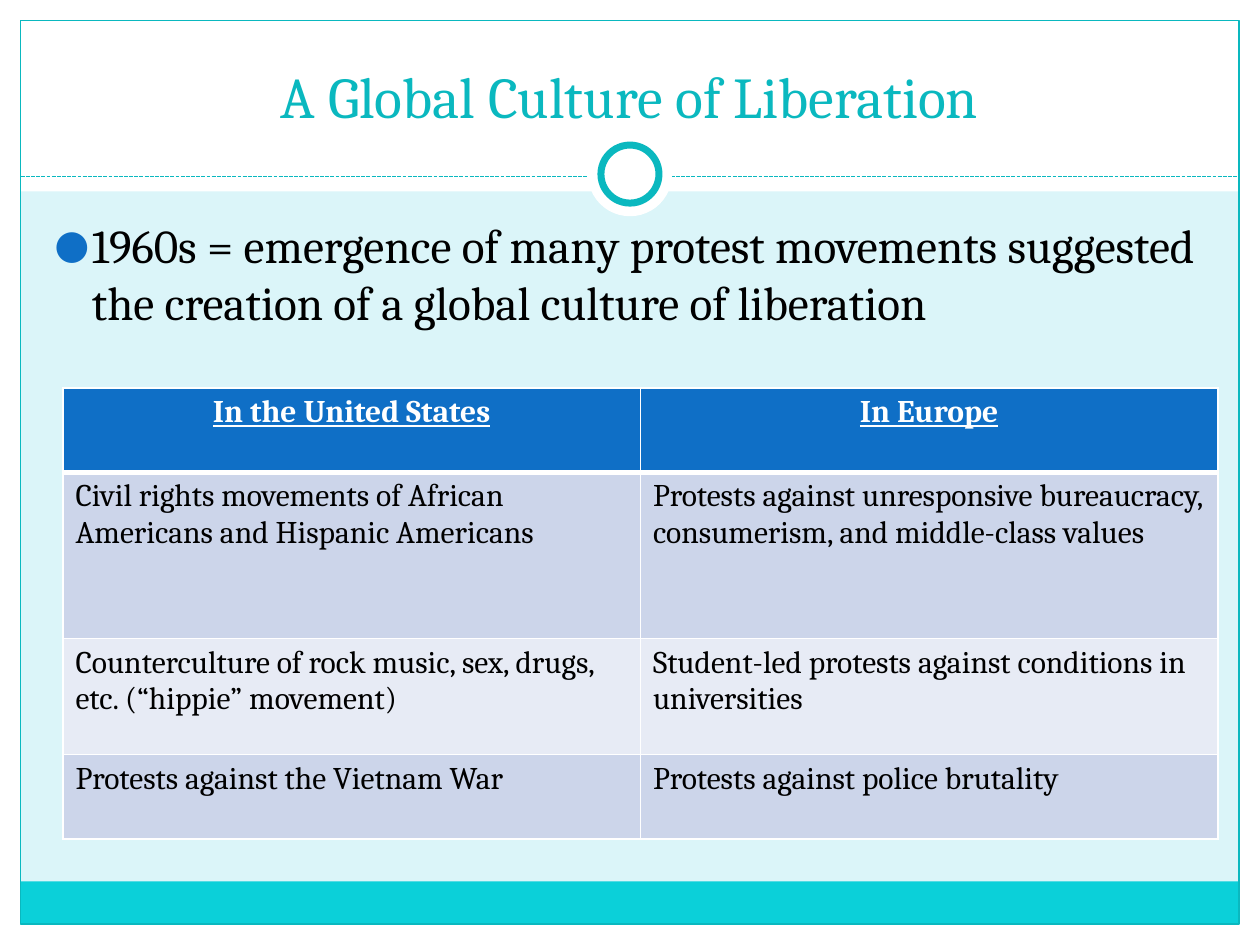
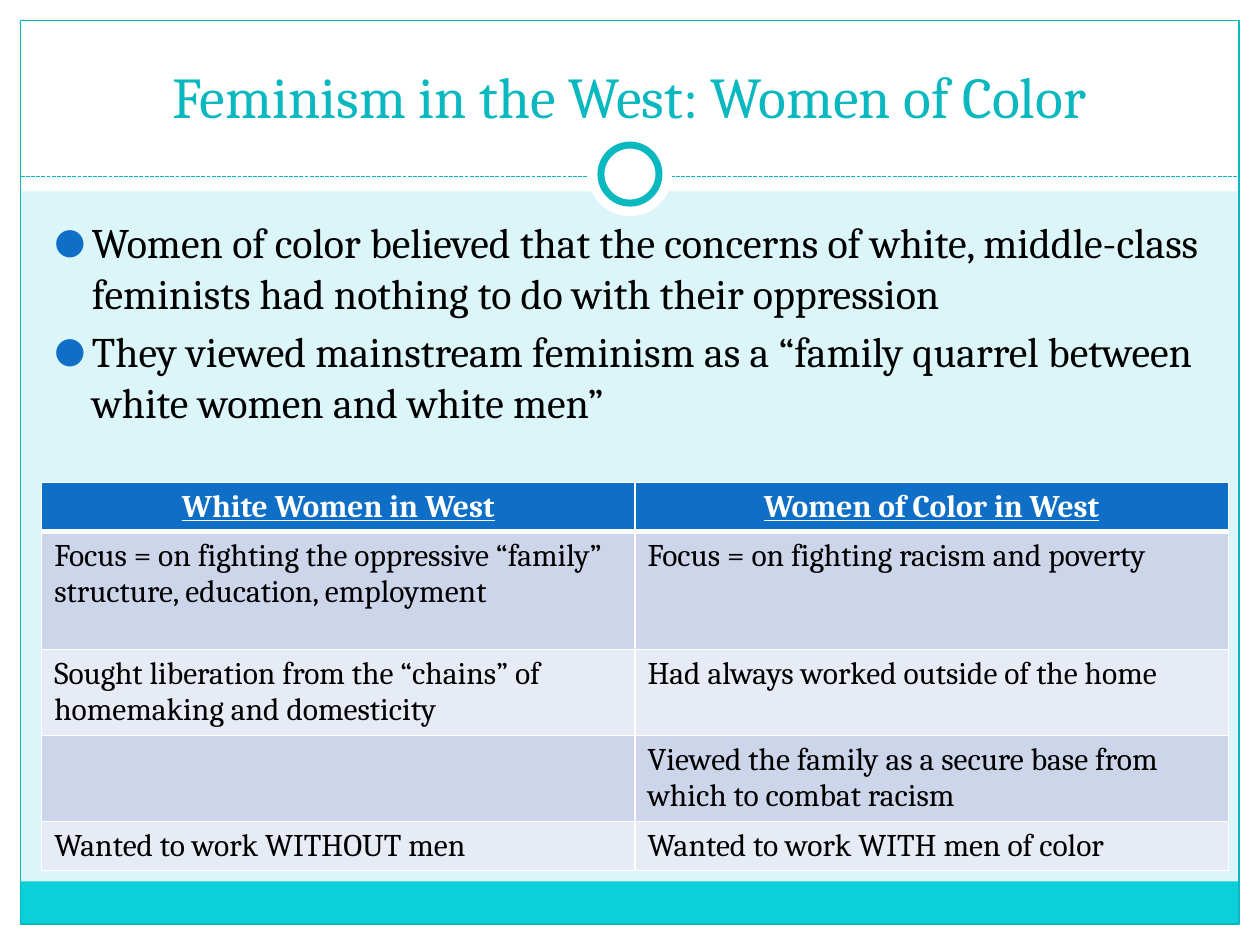
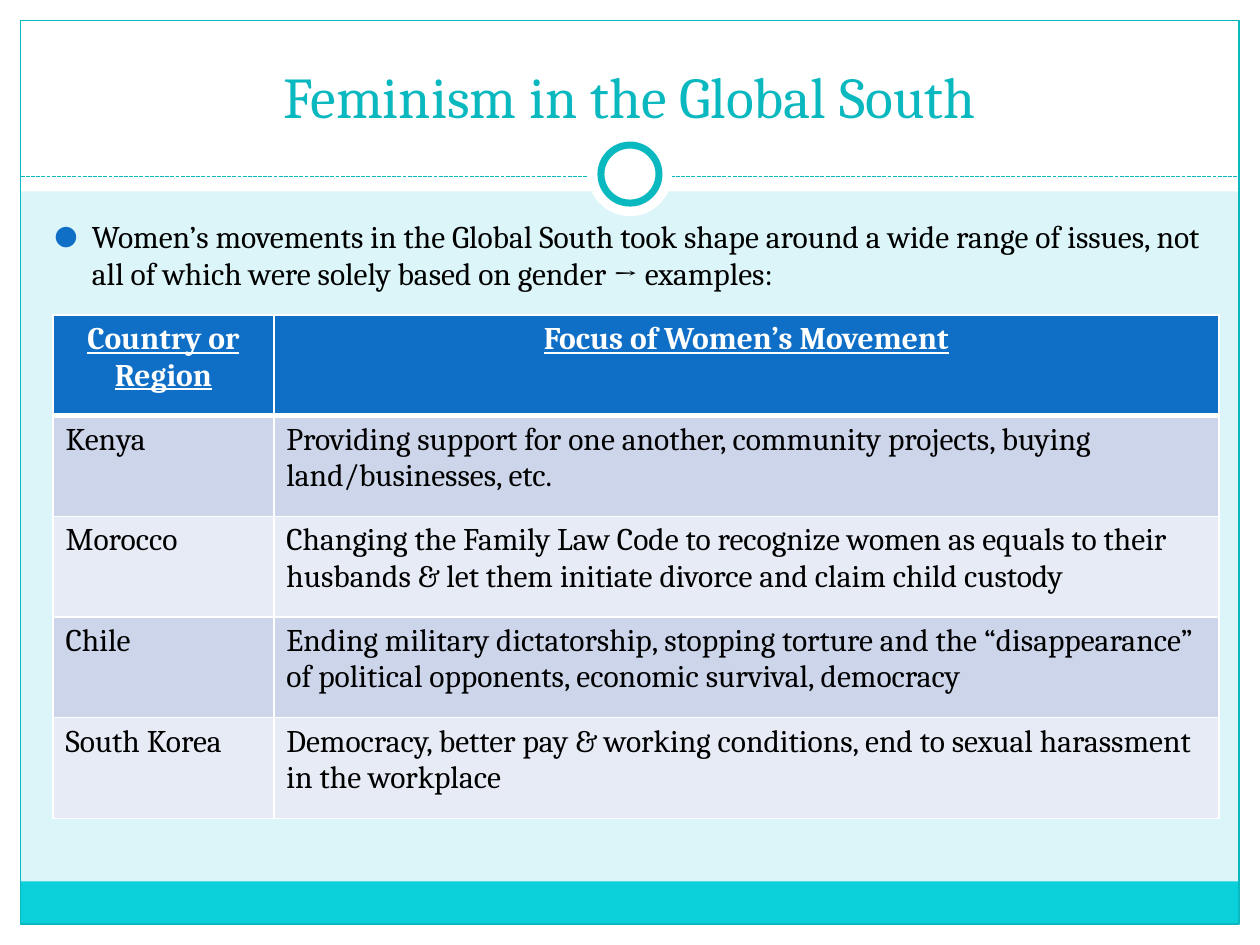
"""Build three slides on liberation movements, each with a list and a table."""
from dataclasses import dataclass

from lxml import etree
from pptx import Presentation
from pptx.dml.color import RGBColor
from pptx.enum.dml import MSO_LINE
from pptx.enum.shapes import MSO_CONNECTOR, MSO_SHAPE
from pptx.enum.text import MSO_ANCHOR, MSO_AUTO_SIZE, PP_ALIGN
from pptx.oxml.ns import qn
from pptx.util import Cm, Pt

RECTANGLE, OVAL = MSO_SHAPE.RECTANGLE, MSO_SHAPE.OVAL
STRAIGHT, DASH = MSO_CONNECTOR.STRAIGHT, MSO_LINE.SQUARE_DOT
CENTER, LEFT = PP_ALIGN.CENTER, PP_ALIGN.LEFT
BOTTOM, TOP = MSO_ANCHOR.BOTTOM, MSO_ANCHOR.TOP
NO_AUTOFIT = MSO_AUTO_SIZE.NONE


@dataclass(frozen=True)
class Theme:
    """Colours, font and type sizes of the deck."""
    font: str = "Cambria"
    backdrop: str = "DBF5F9"
    paper: str = "FFFFFF"
    ink: str = "000000"
    accent: str = "0AB8BF"
    footer: str = "0BD0D9"
    header: str = "0F6FC6"
    stripes: tuple = ("CCD5EA", "E7EBF5")
    title_size: float = 33
    table_size: float = 18
    hairline: float = 0.75
    ring: float = 4
    grid: float = 1
    header_rule: float = 3


@dataclass(frozen=True)
class Box:
    """A region in centimetres."""
    left: float
    top: float
    width: float
    height: float

    @property
    def right(self):
        """Return the right edge."""
        return self.left + self.width

    @property
    def bottom(self):
        """Return the bottom edge."""
        return self.top + self.height

    def lengths(self):
        """Return left, top, width and height as lengths."""
        return Cm(self.left), Cm(self.top), Cm(self.width), Cm(self.height)


THEME = Theme()
PAGE = Box(0, 0, 25.4, 19.05)
MARGIN = 0.42
FRAME = Box(MARGIN, MARGIN, PAGE.width - 2 * MARGIN, PAGE.height - 2 * MARGIN)
TITLE_BOX = Box(0.84, 0.64, 23.7, 2.11)
LIST_LEFT, LIST_TOP, LIST_WIDTH = 0.84, 4.24, 23.62

SLIDES = [
    {
        "title": "A Global Culture of Liberation",
        "points": ["1960s = emergence of many protest movements suggested the creation "
                   "of a global culture of liberation"],
        "point_size": 27,
        "list_height": 3.58,
        "table_corner": (1.27, 7.82),
        "columns": [11.64, 11.64],
        "row_heights": [1.7, 3.35, 2.34, 1.7],
        "rows": [
            ("In the United States", "In Europe"),
            ("Civil rights movements of African Americans and Hispanic Americans",
             "Protests against unresponsive bureaucracy, consumerism, and middle-class values"),
            ("Counterculture of rock music, sex, drugs, etc. (“hippie” movement)",
             "Student-led protests against conditions in universities"),
            ("Protests against the Vietnam War", "Protests against police brutality"),
        ],
    },
    {
        "title": "Feminism in the West: Women of Color",
        "points": ["Women of color believed that the concerns of white, middle-class "
                   "feminists had nothing to do with their oppression",
                   "They viewed mainstream feminism as a “family quarrel between "
                   "white women and white men”"],
        "point_size": 24,
        "list_height": 5.92,
        "table_corner": (0.84, 9.73),
        "columns": [11.96, 11.96],
        "row_heights": [0.98, 2.38, 1.73, 1.73, 0.98],
        "rows": [
            ("White Women in West", "Women of Color in West"),
            ("Focus = on fighting the oppressive “family” structure, education, employment",
             "Focus = on fighting racism and poverty"),
            ("Sought liberation from the “chains” of homemaking and domesticity",
             "Had always worked outside of the home"),
            ("", "Viewed the family as a secure base from which to combat racism"),
            ("Wanted to work WITHOUT men", "Wanted to work WITH men of color"),
        ],
    },
    {
        "title": "Feminism in the Global South",
        "points": ["Women’s movements in the Global South took shape around a wide range "
                   "of issues, not all of which were solely based on gender → examples:"],
        "point_size": 18,
        "list_height": 1.9,
        "table_corner": (1.07, 6.35),
        "columns": [4.45, 19.05],
        "row_heights": [2.03] * 5,
        "rows": [
            ("Country or Region", "Focus of Women’s Movement"),
            ("Kenya", "Providing support for one another, community projects, buying "
                      "land/businesses, etc."),
            ("Morocco", "Changing the Family Law Code to recognize women as equals to their "
                        "husbands & let them initiate divorce and claim child custody"),
            ("Chile", "Ending military dictatorship, stopping torture and the “disappearance” "
                      "of political opponents, economic survival, democracy"),
            ("South Korea", "Democracy, better pay & working conditions, end to sexual "
                            "harassment in the workplace"),
        ],
    },
]


def rgb(color):
    """Return a colour from its hex digits."""
    return RGBColor.from_string(color)


def format_runs(paragraph, size, color, bold=False, underline=False):
    """Format every run of a paragraph."""
    for run in paragraph.runs:
        run.font.name = THEME.font
        run.font.size = Pt(size)
        run.font.color.rgb = rgb(color)
        run.font.bold = bold
        run.font.underline = underline


def add_figure(shapes, preset, box, fill=None, line=None, weight=THEME.hairline):
    """Add a preset shape with an optional fill and outline."""
    figure = shapes.add_shape(preset, *box.lengths())
    figure.shadow.inherit = False
    if fill:
        figure.fill.solid()
        figure.fill.fore_color.rgb = rgb(fill)
    else:
        figure.fill.background()
    if line:
        figure.line.color.rgb = rgb(line)
        figure.line.width = Pt(weight)
    else:
        figure.line.fill.background()
    return figure


def add_divider(shapes, frame, y):
    """Add the dashed line across the frame."""
    divider = shapes.add_connector(STRAIGHT, Cm(frame.left), Cm(y), Cm(frame.right), Cm(y))
    divider.line.color.rgb = rgb(THEME.accent)
    divider.line.width = Pt(THEME.hairline)
    divider.line.dash_style = DASH
    etree.SubElement(divider.element.spPr, qn("a:effectLst"))
    return divider


def circle_box(center_x, center_y, diameter):
    """Return the box of a circle around a center."""
    return Box(center_x - diameter / 2, center_y - diameter / 2, diameter, diameter)


def draw_backdrop(shapes, page, frame):
    """Draw the bands, frame, divider and ring, from back to front."""
    bands = [
        Box(page.left, frame.bottom, page.width, MARGIN),
        Box(page.left, page.top, page.width, 3.86),
        Box(page.left, page.top, MARGIN, page.height),
        Box(frame.right, page.top, MARGIN, page.height),
    ]
    parts = [add_figure(shapes, RECTANGLE, band, THEME.paper) for band in bands]
    footer = Box(frame.left, frame.bottom - 0.86, frame.width, 0.86)
    parts.append(add_figure(shapes, RECTANGLE, footer, THEME.footer))
    parts.append(add_figure(shapes, RECTANGLE, frame, line=THEME.accent))
    parts.append(add_divider(shapes, frame, frame.top + 3.14))
    center = page.width / 2, frame.top + 3.09
    parts.append(add_figure(shapes, OVAL, circle_box(*center, 1.7), THEME.paper))
    parts.append(add_figure(shapes, OVAL, circle_box(*center, 1.17),
                            THEME.paper, THEME.accent, THEME.ring))
    return parts


def furnish_layout(layout, slide):
    """Give the layout its background and the parts drawn by way of a slide."""
    layout.background.fill.solid()
    layout.background.fill.fore_color.rgb = rgb(THEME.backdrop)
    for index, part in enumerate(draw_backdrop(slide.shapes, PAGE, FRAME)):
        layout.shapes.element.insert(2 + index, part.element)


def place(placeholder, box, anchor):
    """Move a placeholder to a box and return its text frame."""
    placeholder.left, placeholder.top, placeholder.width, placeholder.height = box.lengths()
    frame = placeholder.text_frame
    frame.auto_size = NO_AUTOFIT
    frame.word_wrap = True
    frame.vertical_anchor = anchor
    return frame


def fill_title(placeholder, box, title):
    """Place and format the slide title."""
    frame = place(placeholder, box, BOTTOM)
    frame.text = title
    frame.paragraphs[0].alignment = CENTER
    format_runs(frame.paragraphs[0], THEME.title_size, THEME.accent)


def add_bullet(paragraph):
    """Give a paragraph a hanging round bullet."""
    properties = paragraph._p.get_or_add_pPr()
    properties.set("marL", str(Cm(0.76)))
    properties.set("indent", str(-Cm(0.76)))
    color = etree.SubElement(properties, qn("a:buClr"))
    etree.SubElement(color, qn("a:srgbClr"), val=THEME.header)
    etree.SubElement(properties, qn("a:buSzPct"), val="85000")
    etree.SubElement(properties, qn("a:buFont"), typeface=THEME.font)
    etree.SubElement(properties, qn("a:buChar"), char="●")


def fill_list(placeholder, box, points, size):
    """Place the list and format its points."""
    frame = place(placeholder, box, TOP)
    frame.text = "\n".join(points)
    for paragraph in frame.paragraphs:
        add_bullet(paragraph)
        format_runs(paragraph, size, THEME.ink)


def set_borders(cell, top, bottom):
    """Draw the four borders of a cell, widths in points."""
    properties = cell._tc.get_or_add_tcPr()
    widths = {"lnL": THEME.grid, "lnR": THEME.grid, "lnT": top, "lnB": bottom}
    for index, (side, width) in enumerate(widths.items()):
        border = etree.Element(qn(f"a:{side}"), w=str(Pt(width)))
        fill = etree.SubElement(border, qn("a:solidFill"))
        etree.SubElement(fill, qn("a:srgbClr"), val=THEME.paper)
        properties.insert(index, border)


def fill_cell(cell, text, row):
    """Write and format one cell according to its row."""
    is_header = row == 0
    cell.text = text
    cell.fill.solid()
    cell.fill.fore_color.rgb = rgb(THEME.header if is_header else THEME.stripes[(row - 1) % 2])
    paragraph = cell.text_frame.paragraphs[0]
    paragraph.alignment = CENTER if is_header else LEFT
    format_runs(paragraph, THEME.table_size, THEME.paper if is_header else THEME.ink,
                is_header, is_header)
    set_borders(cell, THEME.header_rule if row == 1 else THEME.grid,
                THEME.header_rule if is_header else THEME.grid)


def add_comparison(shapes, box, columns, row_heights, rows):
    """Add the table with its header row and striped rows."""
    table = shapes.add_table(len(rows), len(columns), *box.lengths()).table
    for column, width in zip(table.columns, columns):
        column.width = Cm(width)
    for index, (height, texts) in enumerate(zip(row_heights, rows)):
        table.rows[index].height = Cm(height)
        for cell, text in zip(table.rows[index].cells, texts):
            fill_cell(cell, text, index)


def build_slide(slide, content):
    """Fill a slide with its title, list and table."""
    fill_title(slide.shapes.title, TITLE_BOX, content["title"])
    list_box = Box(LIST_LEFT, LIST_TOP, LIST_WIDTH, content["list_height"])
    fill_list(slide.placeholders[1], list_box, content["points"], content["point_size"])
    columns, heights = content["columns"], content["row_heights"]
    table_box = Box(*content["table_corner"], sum(columns), sum(heights))
    add_comparison(slide.shapes, table_box, columns, heights, content["rows"])


def main():
    """Build and save the deck."""
    deck = Presentation()
    deck.slide_width, deck.slide_height = Cm(PAGE.width), Cm(PAGE.height)
    layout = deck.slide_layouts[1]
    slides = [deck.slides.add_slide(layout) for _ in SLIDES]
    furnish_layout(layout, slides[0])
    for slide, content in zip(slides, SLIDES):
        build_slide(slide, content)
    deck.save("out.pptx")


if __name__ == "__main__":
    main()
